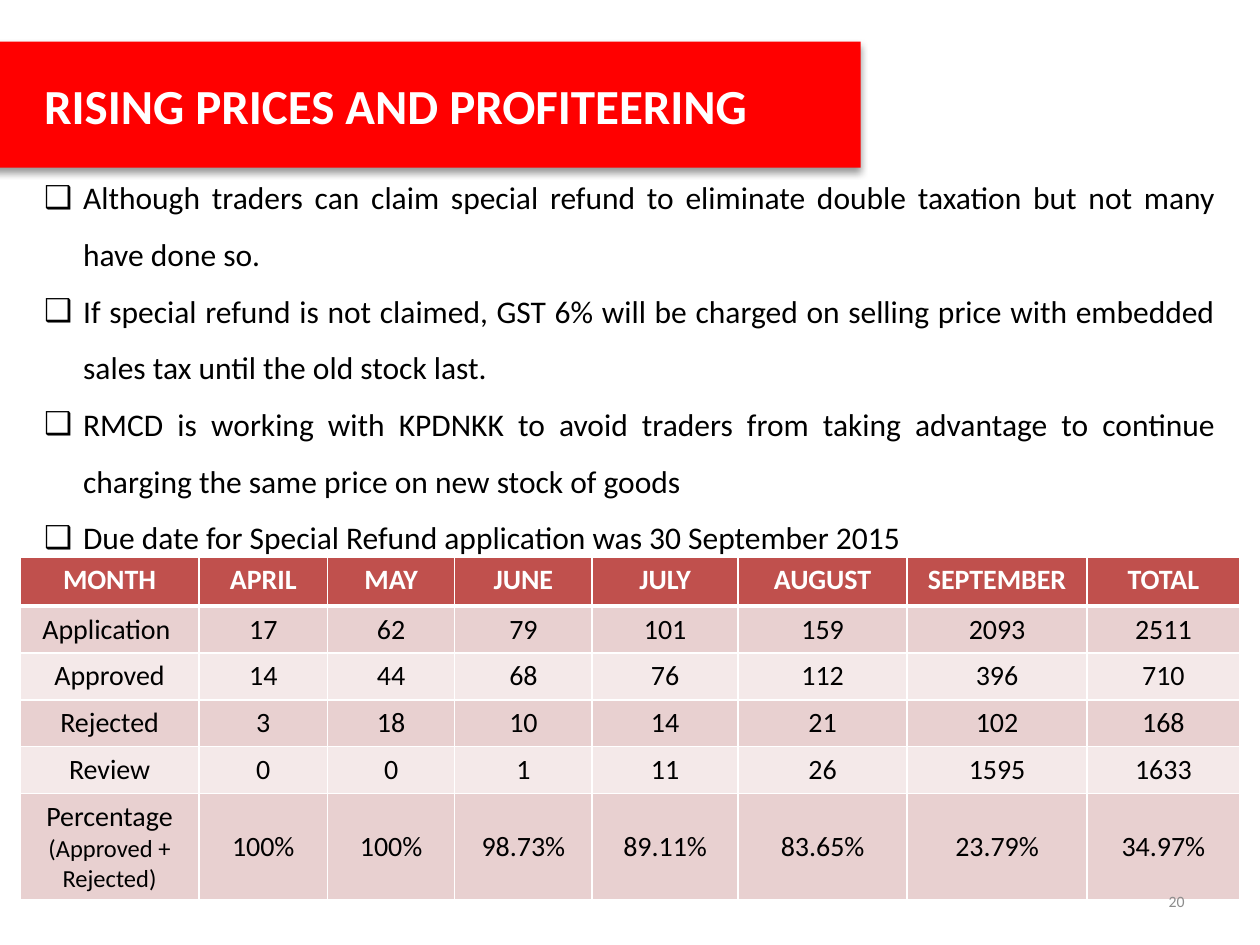
from lxml import etree
from pptx import Presentation
from pptx.dml.color import RGBColor
from pptx.enum.text import MSO_ANCHOR, MSO_AUTO_SIZE, PP_ALIGN
from pptx.oxml.ns import qn
from pptx.util import Inches, Pt

LEFT, RIGHT = PP_ALIGN.LEFT, PP_ALIGN.RIGHT
CENTER, JUSTIFY = PP_ALIGN.CENTER, PP_ALIGN.JUSTIFY
TOP, MIDDLE = MSO_ANCHOR.TOP, MSO_ANCHOR.MIDDLE
NO_FIT = MSO_AUTO_SIZE.NONE

FONT = "Calibri"
BLACK, WHITE, RED, GREY = "000000", "FFFFFF", "FF0000", "8C8C8C"
HEAD, BANDS = "C0504D", ("E8D0D0", "F4E9E9")

POINTS = [
    "Although traders can claim special refund to eliminate double taxation "
    "but not many have done so.",
    "If special refund is not claimed, GST 6% will be charged on selling price "
    "with embedded sales tax until the old stock last.",
    "RMCD is working with KPDNKK to avoid traders from taking advantage to "
    "continue charging the same price on new stock of goods",
    "Due date for Special Refund application was 30 September 2015",
]
ROWS = [
    ["MONTH", "APRIL", "MAY", "JUNE", "JULY", "AUGUST", "SEPTEMBER", "TOTAL"],
    ["Application ", "17", "62", "79", "101", "159", "2093", "2511"],
    ["Approved", "14", "44", "68", "76", "112", "396", "710"],
    ["Rejected", "3", "18", "10", "14", "21", "102", "168"],
    ["Review", "0", "0", "1", "11", "26", "1595", "1633"],
    ["Percentage", "100%", "100%", "98.73%", "89.11%", "83.65%", "23.79%",
     "34.97%"],
]
WIDTHS = [1.42, 1.02, 1.01, 1.09, 1.16, 1.34, 1.43, 1.21]
HEIGHTS = [0.39] + [0.37] * 4 + [0.82]


def color(code):
    return RGBColor.from_string(code)


def paint(part, code):
    part.fill.solid()
    part.fill.fore_color.rgb = color(code)


def place(shape, box):
    shape.left, shape.top, shape.width, shape.height = map(Inches, box)
    frame = shape.text_frame
    frame.word_wrap = True
    frame.auto_size = NO_FIT
    frame.vertical_anchor = MIDDLE
    return frame


def write(para, text, size, code=BLACK, bold=False, align=CENTER):
    para.alignment = align
    run = para.add_run()
    run.text = text
    font = run.font
    font.name, font.size, font.bold = FONT, Pt(size), bold
    font.color.rgb = color(code)


def indent(para, margin, first=0):
    props = para._p.get_or_add_pPr()
    props.set("marL", str(Inches(margin)))
    props.set("indent", str(Inches(first)))
    return props


def shade(shape):
    """Give the shape a soft shadow straight below it."""
    shape.shadow.inherit = False
    effects = shape._element.spPr.find(qn("a:effectLst"))
    outer = etree.SubElement(
        effects, qn("a:outerShdw"), blurRad=str(Pt(4)), dist=str(Pt(3)),
        dir=str(90 * 60000), algn="t", rotWithShape="0")
    tone = etree.SubElement(outer, qn("a:srgbClr"), val=BLACK)
    etree.SubElement(tone, qn("a:alpha"), val="40000")


def add_banner(slide, box):
    title = slide.shapes.title
    para = place(title, box).paragraphs[0]
    paint(title, RED)
    shade(title)
    indent(para, 0.5)
    write(para, "RISING PRICES AND PROFITEERING", 28, WHITE, True, LEFT)


def add_points(slide, box):
    frame = place(slide.placeholders[1], box)
    for i, text in enumerate(POINTS):
        para = frame.add_paragraph() if i else frame.paragraphs[0]
        props = indent(para, 0.31, -0.31)
        etree.SubElement(props, qn("a:buChar"), char="❑")
        para.line_spacing = 1.5
        para.space_before = Pt(0)
        write(para, text, 18, align=JUSTIFY)


def edge(cell, base):
    """Draw white cell borders, with the given width at the bottom."""
    props = cell._tc.get_or_add_tcPr()
    for i, (side, width) in enumerate(
            [("lnL", 1), ("lnR", 1), ("lnT", 1), ("lnB", base)]):
        line = etree.Element(qn("a:" + side), w=str(Pt(width)))
        fill = etree.SubElement(line, qn("a:solidFill"))
        etree.SubElement(fill, qn("a:srgbClr"), val=WHITE)
        props.insert(i, line)


def add_refunds(slide, left, top):
    table = slide.shapes.add_table(
        len(ROWS), len(WIDTHS), Inches(left), Inches(top),
        Inches(sum(WIDTHS)), Inches(sum(HEIGHTS))).table
    for col, width in zip(table.columns, WIDTHS):
        col.width = Inches(width)
    for r, (row, height) in enumerate(zip(ROWS, HEIGHTS)):
        table.rows[r].height = Inches(height)
        head = r == 0
        for c, text in enumerate(row):
            cell = table.cell(r, c)
            cell.vertical_anchor = TOP if head else MIDDLE
            paint(cell, HEAD if head else BANDS[(r - 1) % 2])
            edge(cell, 3 if head else 1)
            write(cell.text_frame.paragraphs[0], text, 16,
                  WHITE if head else BLACK, head)
    note = table.cell(len(ROWS) - 1, 0).text_frame.add_paragraph()
    write(note, "(Approved + Rejected)", 14)


def add_number(slide, box):
    frame = place(slide.shapes.add_textbox(0, 0, 0, 0), box)
    write(frame.paragraphs[0], "20", 9, GREY, align=RIGHT)


def main():
    deck = Presentation()
    deck.slide_width, deck.slide_height = Inches(10), Inches(7.5)
    slide = deck.slides.add_slide(deck.slide_layouts[1])
    add_banner(slide, (-0.25, 0.33, 7.08, 1))
    add_points(slide, (0.25, 1.59, 9.5, 2.5))
    add_refunds(slide, 0.16, 4.42)
    add_number(slide, (7.17, 6.95, 2.33, 0.4))
    deck.save("out.pptx")


if __name__ == "__main__":
    main()
